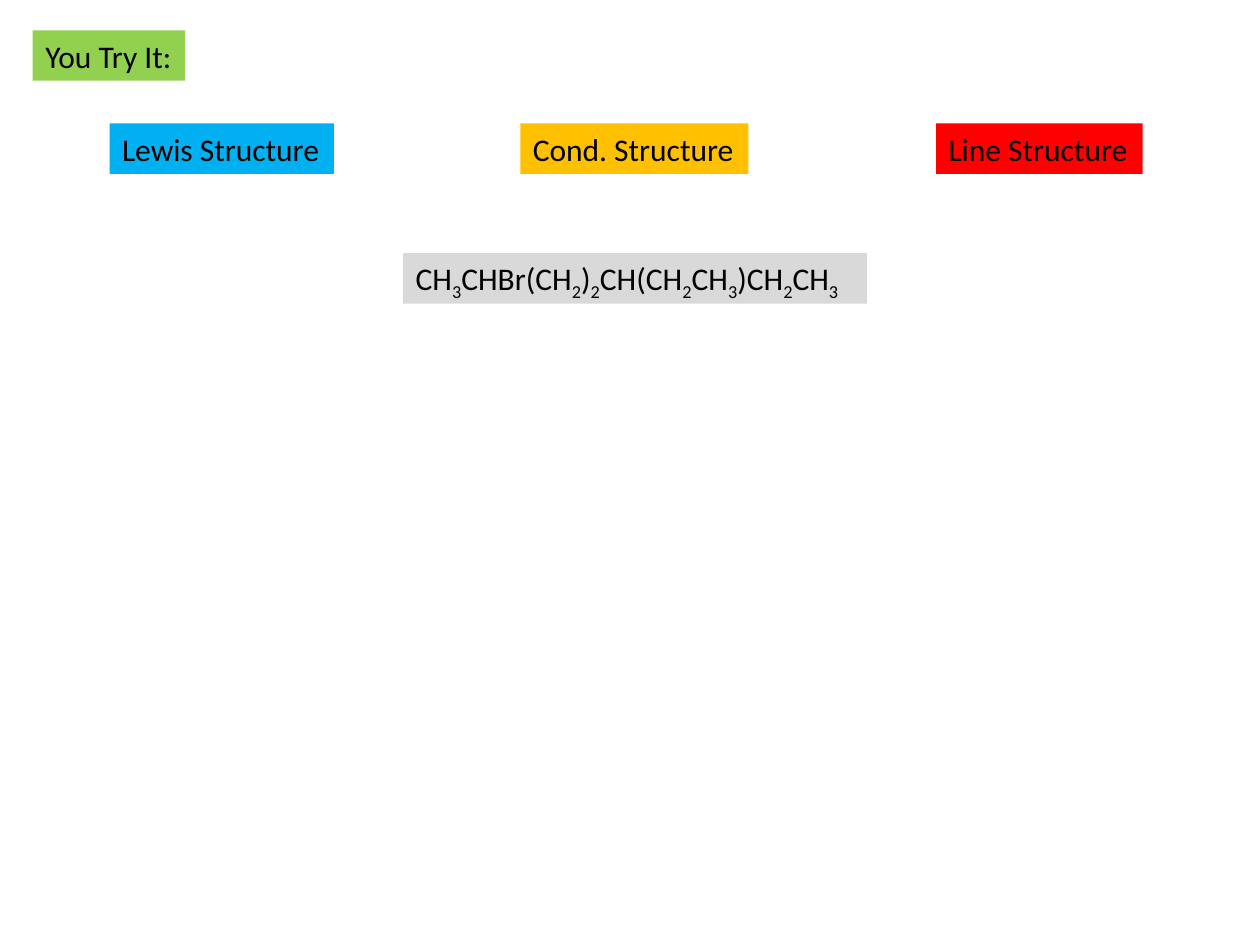
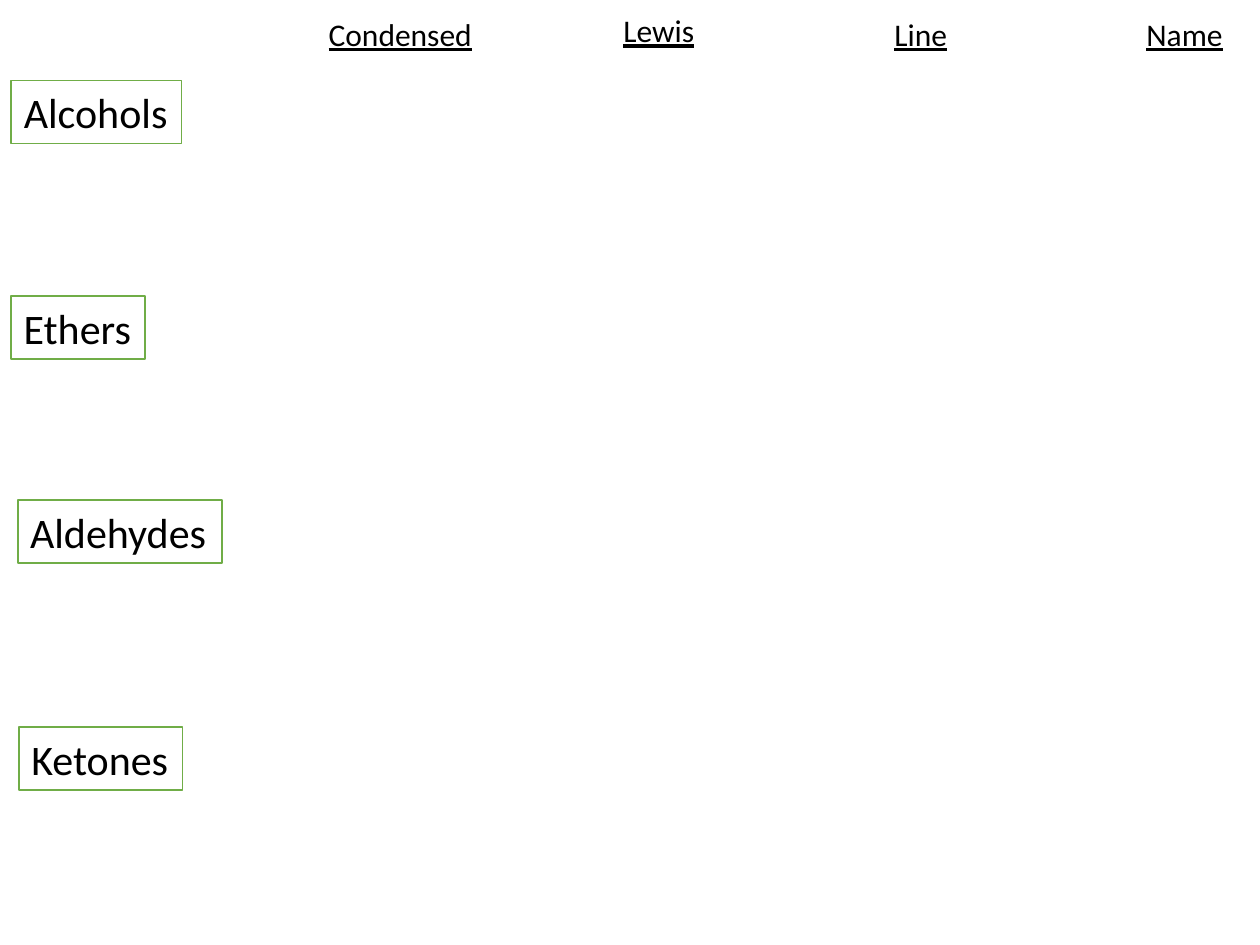
from pptx import Presentation
from pptx import util as u
from pptx.dml import color
from pptx.enum import shapes, text

FONT = "Calibri"
LABEL_H, FAMILY_H = 0.4, 0.5
COLORS = {
    "text": "000000",
    "prompt": "92D050",
    "lewis": "00B0F0",
    "condensed": "FFC000",
    "line": "FF0000",
    "formula": "D9D9D9",
    "family": "FFFFFF",
    "border": "70AD47",
}


def rgb(name):
    return color.RGBColor.from_string(COLORS[name])


def place(sp, left, top, width, height):
    sp.left, sp.top = u.Inches(left), u.Inches(top)
    sp.width, sp.height = u.Inches(width), u.Inches(height)


def fill_shape(sp, fill):
    sp.fill.solid()
    sp.fill.fore_color.rgb = rgb(fill)


def add_run(p, words, size, underline=False, subscript=False):
    r = p.add_run()
    r.text = words
    r.font.name = FONT
    r.font.size = u.Pt(size)
    r.font.color.rgb = rgb("text")
    if underline:
        r.font.underline = True
    if subscript:
        r._r.get_or_add_rPr().set("baseline", "-25000")


def start_text(sp, wrap=False, grow=True):
    tf = sp.text_frame
    tf.word_wrap = wrap
    sizes = text.MSO_AUTO_SIZE
    tf.auto_size = sizes.SHAPE_TO_FIT_TEXT if grow else sizes.NONE
    tf.vertical_anchor = text.MSO_ANCHOR.TOP
    p = tf.paragraphs[0]
    p.alignment = text.PP_ALIGN.LEFT
    return p


def add_title(s, words, box, fill):
    sp = s.shapes.title
    place(sp, *box)
    fill_shape(sp, fill)
    sp.text_frame.margin_right = 0
    add_run(start_text(sp, wrap=True, grow=False), words, 18)


def add_box(s, box, fill, border=None, wrap=False):
    sp = s.shapes.add_shape(shapes.MSO_SHAPE.RECTANGLE, *map(u.Inches, box))
    sp.shadow.inherit = False
    fill_shape(sp, fill)
    if border:
        sp.line.color.rgb = rgb(border)
        sp.line.width = u.Pt(1)
    else:
        sp.line.fill.background()
    return start_text(sp, wrap)


def add_formula(s, formula, box):
    p = add_box(s, box, "formula", wrap=True)
    for i, part in enumerate(formula.split("_")):
        if i:
            add_run(p, part[0], 18, subscript=True)
            part = part[1:]
        if part:
            add_run(p, part, 18)


def add_heading(s, words, left, top, width):
    sp = s.shapes.add_textbox(*map(u.Inches, (left, top, width, LABEL_H)))
    add_run(start_text(sp), words, 18, underline=True)


def build_practice(prs):
    s = prs.slides.add_slide(prs.slide_layouts[5])
    add_title(s, "You Try It:", (0.26, 0.24, 1.21, LABEL_H), "prompt")
    for words, left, width, fill in (
        ("Lewis Structure", 0.87, 1.78, "lewis"),
        ("Cond. Structure", 4.13, 1.81, "condensed"),
        ("Line Structure", 7.43, 1.64, "line"),
    ):
        add_run(add_box(s, (left, 0.98, width, LABEL_H), fill), words, 18)
    add_formula(s, "CH_3CHBr(CH_2)_2CH(CH_2CH_3)CH_2CH_3",
                (3.2, 2.01, 3.68, LABEL_H))


def build_families(prs):
    s = prs.slides.add_slide(prs.slide_layouts[6])
    for words, left, top, width in (
        ("Alcohols", 0.09, 0.64, 1.35),
        ("Aldehydes", 0.14, 3.97, 1.62),
        ("Ethers", 0.09, 2.35, 1.06),
        ("Ketones", 0.15, 5.77, 1.3),
    ):
        p = add_box(s, (left, top, width, FAMILY_H), "family", "border")
        add_run(p, words, 24)
    for words, left, top, width in (
        ("Condensed", 2.51, 0.07, 1.35),
        ("Lewis", 4.85, 0.04, 0.77),
        ("Line", 7, 0.07, 0.63),
        ("Name", 9, 0.07, 0.81),
    ):
        add_heading(s, words, left, top, width)


def main():
    prs = Presentation()
    prs.slide_width, prs.slide_height = u.Inches(10), u.Inches(7.5)
    build_practice(prs)
    build_families(prs)
    prs.save("out.pptx")


if __name__ == "__main__":
    main()
